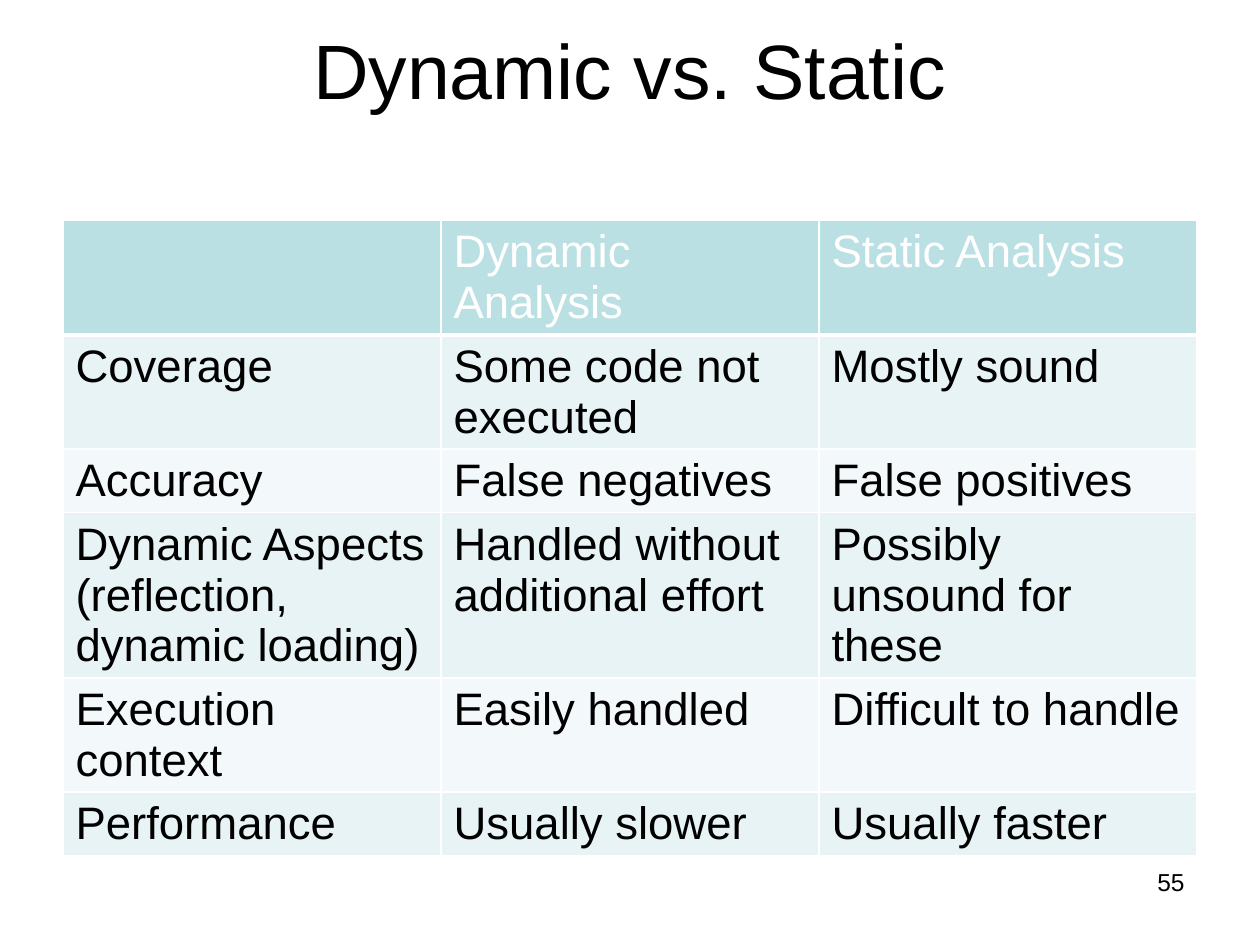
import pptx
import pptx.dml.color
import pptx.enum.text
import pptx.oxml
import pptx.oxml.ns
import pptx.util
from pptx.util import Inches, Pt

RGBColor = pptx.dml.color.RGBColor
Align = pptx.enum.text.PP_ALIGN
Anchor = pptx.enum.text.MSO_ANCHOR

TITLE = "Dynamic vs. Static"
PAGE_NUMBER = "55"
ROWS = [
    ("", "Dynamic Analysis", "Static Analysis"),
    ("Coverage", "Some code not executed", "Mostly sound"),
    ("Accuracy", "False negatives", "False positives"),
    ("Dynamic Aspects (reflection, dynamic loading)",
     "Handled without additional effort", "Possibly unsound for these"),
    ("Execution context", "Easily handled", "Difficult to handle"),
    ("Performance", "Usually slower", "Usually faster"),
]

FONT = "Arial"
BLACK = RGBColor(0x00, 0x00, 0x00)
WHITE = RGBColor(0xFF, 0xFF, 0xFF)
HEADER_FILL = RGBColor(0xBB, 0xE0, 0xE3)
BAND_FILLS = (RGBColor(0xF3, 0xF9, 0xFA), RGBColor(0xE7, 0xF3, 0xF4))

COLUMN_WIDTH = 3
ROW_HEIGHT = 0.41


def add_span(para, text, size, color):
    span = para.add_run()
    span.text = text
    span.font.name = FONT
    span.font.size = Pt(size)
    span.font.bold = False
    span.font.color.rgb = color


def set_border(cell, side, points):
    properties = cell._tc.get_or_add_tcPr()
    properties.append(pptx.oxml.parse_xml(
        f'<a:{side} {pptx.oxml.ns.nsdecls("a")} w="{Pt(points)}">'
        f'<a:solidFill><a:srgbClr val="{WHITE}"/></a:solidFill></a:{side}>'))


def add_title(page):
    title = page.shapes.title
    title.left, title.top = Inches(0.5), Inches(-0.08)
    title.width, title.height = Inches(9), Inches(1.25)
    title.text_frame.vertical_anchor = Anchor.MIDDLE
    para = title.text_frame.paragraphs[0]
    para.alignment = Align.CENTER
    add_span(para, TITLE, 44, BLACK)


def add_comparison(page):
    columns = len(ROWS[0])
    table = page.shapes.add_table(
        len(ROWS), columns, Inches(0.5), Inches(1.75),
        Inches(COLUMN_WIDTH * columns), Inches(ROW_HEIGHT * len(ROWS))).table
    for r, texts in enumerate(ROWS):
        header = r == 0
        for c, text in enumerate(texts):
            cell = table.cell(r, c)
            for side in ("lnL", "lnR", "lnT", "lnB"):
                set_border(cell, side, 3 if header and side == "lnB" else 1)
            cell.fill.solid()
            cell.fill.fore_color.rgb = HEADER_FILL if header else BAND_FILLS[r % 2]
            if text:
                add_span(cell.text_frame.paragraphs[0], text, 26,
                         WHITE if header else BLACK)


def add_page_number(page):
    box = page.shapes.add_textbox(
        Inches(7.17), Inches(6.83), Inches(2.33), Inches(0.52))
    box.text_frame.word_wrap = True
    para = box.text_frame.paragraphs[0]
    para.alignment = Align.RIGHT
    add_span(para, PAGE_NUMBER, 14, BLACK)


def main():
    deck = pptx.Presentation()
    deck.slide_width, deck.slide_height = Inches(10), Inches(7.5)
    page = deck.slides.add_slide(deck.slide_layouts.get_by_name("Title Only"))
    add_title(page)
    add_comparison(page)
    add_page_number(page)
    deck.save("out.pptx")


if __name__ == "__main__":
    main()
